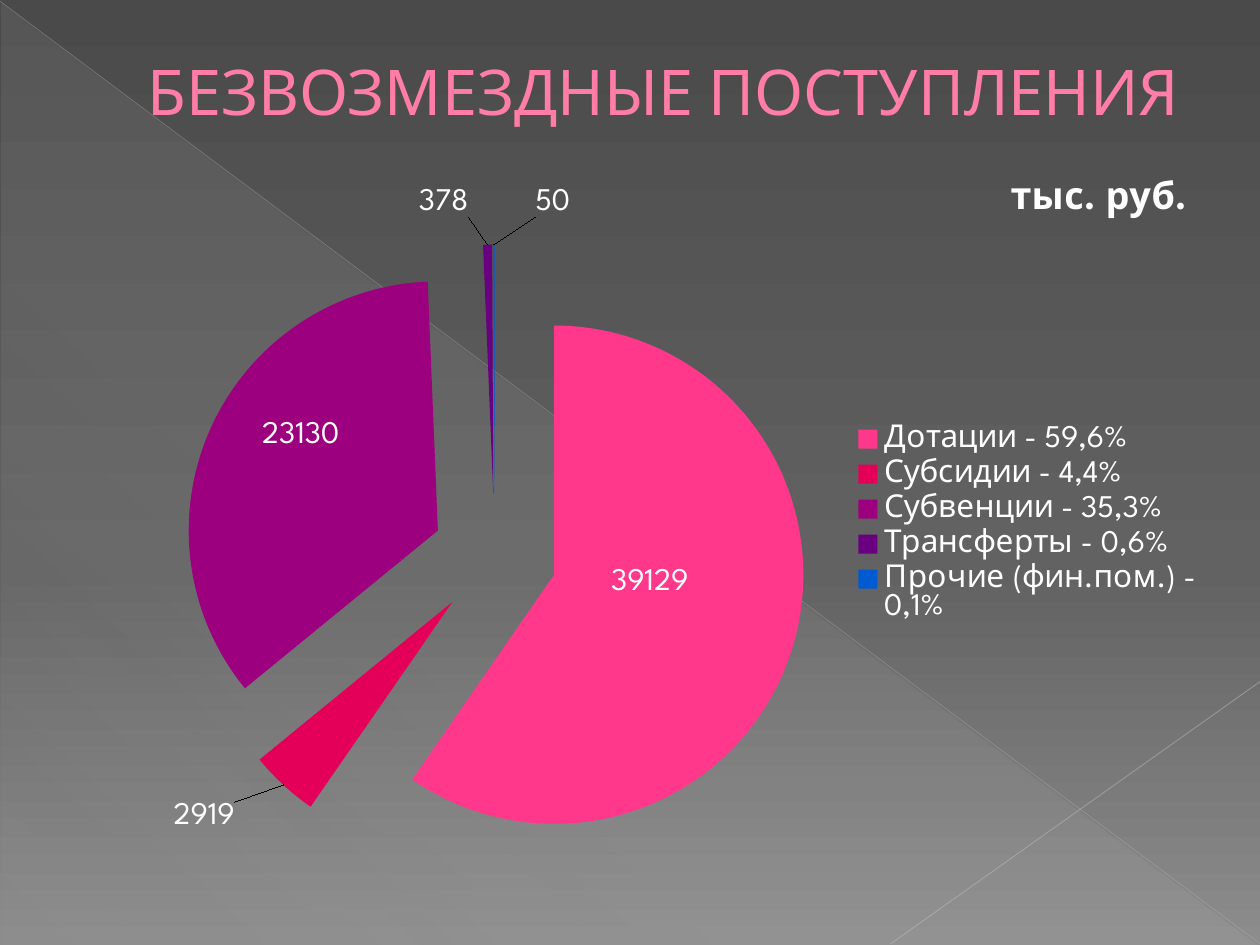
from lxml import etree
from pptx import Presentation
from pptx.chart.data import CategoryChartData
from pptx.dml.color import RGBColor
from pptx.enum.chart import XL_CHART_TYPE, XL_LABEL_POSITION, XL_LEGEND_POSITION
from pptx.enum.shapes import MSO_CONNECTOR, MSO_SHAPE
from pptx.enum.text import MSO_ANCHOR, PP_ALIGN
from pptx.oxml.ns import qn
from pptx.util import Inches, Pt

PIE = XL_CHART_TYPE.PIE
LABEL_CENTER = XL_LABEL_POSITION.CENTER
LEGEND_RIGHT = XL_LEGEND_POSITION.RIGHT
STRAIGHT = MSO_CONNECTOR.STRAIGHT
RIGHT_TRIANGLE = MSO_SHAPE.RIGHT_TRIANGLE
MIDDLE = MSO_ANCHOR.MIDDLE
CENTER = PP_ALIGN.CENTER

FONT = "League Spartan"
WHITE = RGBColor(0xFF, 0xFF, 0xFF)
TITLE_PINK = RGBColor(0xFF, 0x7D, 0xA7)
TITLE_EDGE = RGBColor(0xB1, 0x27, 0x61)
SHEEN = RGBColor(0xD2, 0xD2, 0xD2)
LONG_LINE = RGBColor(0xBF, 0xBF, 0xBF)
SHORT_LINE = RGBColor(0xC6, 0xC6, 0xC6)
BACKDROP = [(0, RGBColor(0x4A, 0x4A, 0x4A), 100),
            (60, RGBColor(0x62, 0x62, 0x62), 100),
            (100, RGBColor(0x8C, 0x8C, 0x8C), 100)]

# Category, value, slice colour, label offset as shares of the chart
SLICES = [
    ("Дотации - 59,6%", 39129, RGBColor(0xFF, 0x38, 0x8C), (-0.02, -0.04)),
    ("Субсидии - 4,4%", 2919, RGBColor(0xE4, 0x00, 0x59), (-0.14, 0.17)),
    ("Субвенции - 35,3%", 23130, RGBColor(0x9C, 0x00, 0x7F), (-0.02, -0.06)),
    ("Трансферты - 0,6%", 378, RGBColor(0x68, 0x00, 0x7F), (-0.04, -0.23)),
    ("Прочие (фин.пом.) - 0,1%", 50, RGBColor(0x00, 0x5B, 0xD3), (0.05, -0.23)),
]


def add_node(parent, tag, **attributes):
    node = etree.SubElement(parent, qn(tag))
    for name, value in attributes.items():
        node.set(name, str(value))
    return node


def add_color(parent, color, opacity):
    node = add_node(parent, "a:srgbClr", val=color)
    if opacity < 100:
        add_node(node, "a:alpha", val=opacity * 1000)


def set_gradient(fill, holder, stops, angle):
    """Fill with (position, colour, opacity) stops, angle clockwise."""
    fill.gradient()
    gradient = next(holder.iter(qn("a:gradFill")))
    for child in list(gradient):
        gradient.remove(child)
    stop_list = add_node(gradient, "a:gsLst")
    for position, color, opacity in stops:
        add_color(add_node(stop_list, "a:gs", pos=position * 1000), color, opacity)
    add_node(gradient, "a:lin", ang=angle * 60000, scaled=0)


def set_layout(parent, index, **shares):
    """Give a chart part a manual place, in shares of the chart."""
    for old in parent.findall(qn("c:layout")):
        parent.remove(old)
    layout = etree.Element(qn("c:layout"))
    parent.insert(index, layout)
    manual = add_node(layout, "c:manualLayout")
    for name, value in shares.items():
        add_node(manual, "c:" + name, val=value)


def add_faint_line(page, start, end, color, width, opacity):
    line = page.shapes.add_connector(STRAIGHT, *map(Inches, start + end))
    line.line.color.rgb = color
    line.line.width = Pt(width)
    tint = next(line._element.spPr.iter(qn("a:srgbClr")))
    add_node(tint, "a:alpha", val=opacity * 1000)
    add_node(line._element.spPr, "a:effectLst")


def draw_backdrop(page, width, height):
    fill = page.background.fill
    set_gradient(fill, page._element, BACKDROP, 90)

    # Pale triangle under the diagonal
    triangle = page.shapes.add_shape(
        RIGHT_TRIANGLE, Inches(0.01), Inches(0.02),
        Inches(width - 0.02), Inches(height - 0.02))
    triangle.shadow.inherit = False
    triangle.line.fill.background()
    stops = [(0, SHEEN, 10), (70, SHEEN, 8), (100, SHEEN, 1)]
    set_gradient(triangle.fill, triangle._element.spPr, stops, 133)

    add_faint_line(page, (0, 0.01), (width, height - 0.01), LONG_LINE, 0.39, 35)
    add_faint_line(page, (width, 5.41), (7.07, height - 0.01), SHORT_LINE, 0.47, 45)


def draw_title(page, box):
    frame = page.shapes.add_textbox(*map(Inches, box)).text_frame
    frame.word_wrap = True
    frame.vertical_anchor = MIDDLE
    para = frame.paragraphs[0]
    para.alignment = CENTER
    para._p.get_or_add_pPr().set("marL", str(Inches(0.53)))
    span = para.add_run()
    span.text = "БЕЗВОЗМЕЗДНЫЕ ПОСТУПЛЕНИЯ"
    span.font.name = FONT
    span.font.size = Pt(36)
    span.font.color.rgb = TITLE_PINK
    # Thin outline around the letters
    outline = etree.Element(qn("a:ln"), w=str(Pt(0.5)))
    add_color(add_node(outline, "a:solidFill"), TITLE_EDGE, 100)
    span.font._element.insert(0, outline)


def style_font(font, size):
    font.name = FONT
    font.size = Pt(size)
    font.color.rgb = WHITE


def draw_pie(page, box):
    data = CategoryChartData()
    data.categories = [name for name, *_ in SLICES]
    data.add_series("Series 1", [value for _, value, *_ in SLICES])
    chart = page.shapes.add_chart(PIE, *map(Inches, box), data).chart
    style_font(chart.font, 18)

    # Unit caption at the top right
    chart.has_title = True
    span = chart.chart_title.text_frame.paragraphs[0].add_run()
    span.text = "тыс. руб."
    style_font(span.font, 21.6)
    span.font.bold = True
    set_layout(chart.chart_title._element, 1,
               xMode="edge", yMode="edge", x=0.82, y=0.01)

    # Legend
    chart.has_legend = True
    chart.legend.position = LEGEND_RIGHT
    chart.legend.include_in_layout = False
    style_font(chart.legend.font, 18)
    set_layout(chart.legend._element, 1, xMode="edge", yMode="edge",
               x=0.69, y=0.35, w=0.3, h=0.29)

    # Slices and their labels
    plot = chart.plots[0]
    plot.vary_by_categories = True
    series = plot.series[0]
    labels = series.data_labels
    labels.show_value = True
    labels.position = LABEL_CENTER
    style_font(labels.font, 18)
    for index, (_, _, color, (dx, dy)) in enumerate(SLICES):
        point = series.points[index]
        point.format.fill.solid()
        point.format.fill.fore_color.rgb = color
        point.format.line.fill.background()
        label = point.data_label
        style_font(label.font, 18)
        label.position = LABEL_CENTER
        set_layout(labels._element.findall(qn("c:dLbl"))[index], 1, x=dx, y=dy)
    explosion = etree.Element(qn("c:explosion"), val="25")
    series._element.find(qn("c:dPt")).addprevious(explosion)

    plot_area = next(chart._chartSpace.iter(qn("c:plotArea")))
    set_layout(plot_area, 0, layoutTarget="inner", xMode="edge", yMode="edge",
               x=0.01, y=0.11, w=0.75, h=0.86)


def main():
    deck = Presentation()
    width, height = 10, 7.5
    deck.slide_width, deck.slide_height = Inches(width), Inches(height)
    page = deck.slides.add_slide(deck.slide_layouts[6])
    draw_backdrop(page, width, height)
    draw_title(page, (0.5, 0.29, width - 1, 0.86))
    draw_pie(page, (0.35, 1.31, 9.29, 5.75))
    deck.save("out.pptx")


if __name__ == "__main__":
    main()
